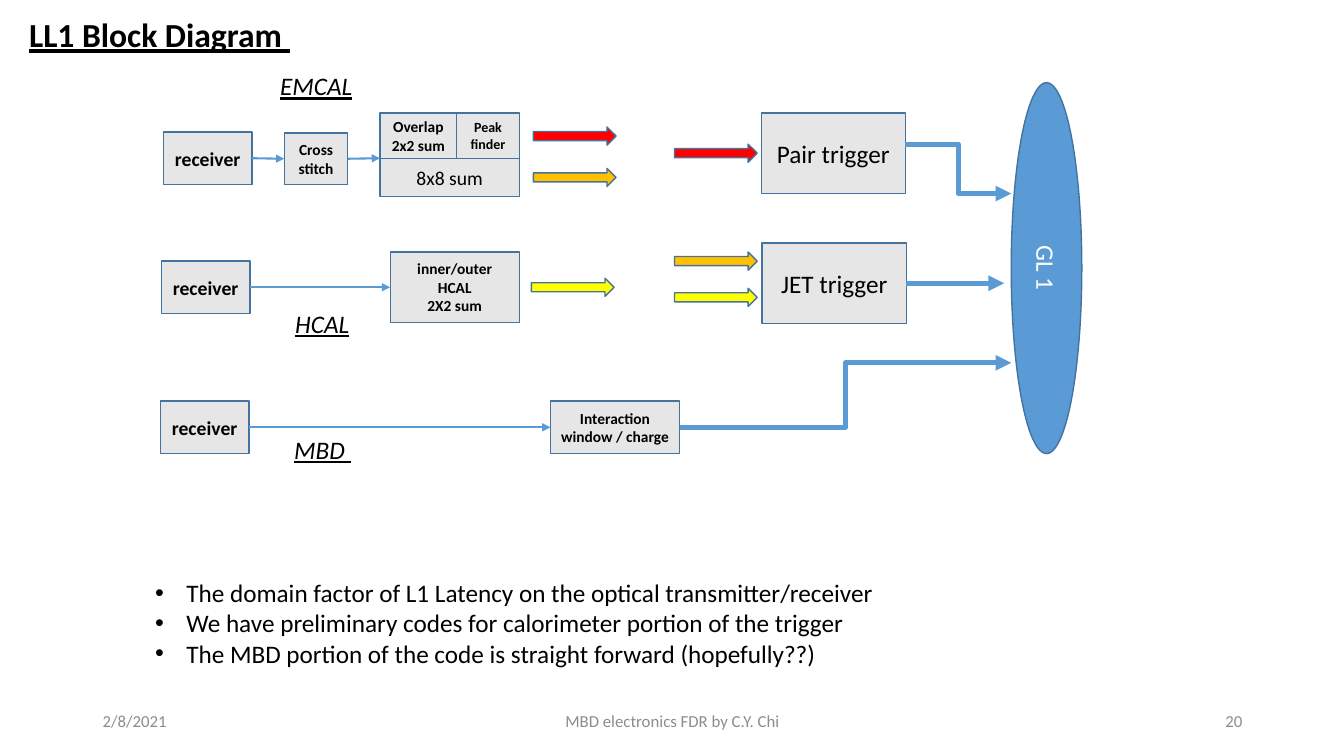
"""Build the LL1 trigger block diagram slide."""
from lxml import etree
from pptx import Presentation
from pptx import util as u
from pptx.dml import color
from pptx.enum import shapes, text
from pptx.oxml import ns

SCALE = 9144
FONT = "Calibri"
BLACK, WHITE, GREY = "000000", "FFFFFF", "8C8C8C"
PANEL, OUTLINE, BLUE = "E7E6E6", "43739E", "5B9BD5"
RED, ORANGE, YELLOW = "FF0000", "FFC000", "FFFF00"
LEFT, CENTER, RIGHT = text.PP_ALIGN.LEFT, text.PP_ALIGN.CENTER, text.PP_ALIGN.RIGHT
MIDDLE, TOP = text.MSO_ANCHOR.MIDDLE, text.MSO_ANCHOR.TOP
LEFT_SIDE, RIGHT_SIDE = 1, 3


def px(*lengths):
    """Turn pixel lengths into EMU."""
    return [u.Emu(length * SCALE) for length in lengths]


def rgb(hex_code):
    """Turn a hex string into a colour."""
    return color.RGBColor.from_string(hex_code)


def write(frame, lines, size, ink=BLACK, align=LEFT, anchor=TOP, **styles):
    """Fill a text frame with one run per paragraph."""
    frame.vertical_anchor = anchor
    for index, line in enumerate(lines):
        paragraph = frame.add_paragraph() if index else frame.paragraphs[0]
        paragraph.alignment = align
        run = paragraph.add_run()
        run.text = line
        run.font.name, run.font.size = FONT, u.Pt(size)
        run.font.color.rgb = rgb(ink)
        for style, value in styles.items():
            setattr(run.font, style, value)


def add_solid(slide, kind, place, fill):
    """Add an outlined preset shape with a flat fill."""
    solid = slide.shapes.add_shape(kind, *px(*place))
    solid.shadow.inherit = False
    solid.fill.solid()
    solid.fill.fore_color.rgb = rgb(fill)
    solid.line.color.rgb = rgb(OUTLINE)
    solid.line.width = u.Pt(1)
    return solid


def add_block(slide, place, lines, size, bold=False):
    """Add a labelled processing block."""
    block = add_solid(slide, shapes.MSO_SHAPE.RECTANGLE, place, PANEL)
    write(block.text_frame, lines, size, align=CENTER, anchor=MIDDLE, bold=bold)
    return block


def add_data_arrow(slide, left, top, fill):
    """Add a coloured arrow for one data stream."""
    add_solid(slide, shapes.MSO_SHAPE.RIGHT_ARROW, (left, top, 82, 18), fill)


def add_label(slide, place, lines, size, wrap=False, **styles):
    """Add a text box and return its frame."""
    frame = slide.shapes.add_textbox(*px(*place)).text_frame
    frame.word_wrap = wrap
    write(frame, lines, size, **styles)
    return frame


def add_link(slide, ends, width, source=None, target=None, elbow=False):
    """Add an arrow-headed connector, joined to the given blocks."""
    kind = shapes.MSO_CONNECTOR.ELBOW if elbow else shapes.MSO_CONNECTOR.STRAIGHT
    link = slide.shapes.add_connector(kind, *px(*ends))
    link.line.color.rgb = rgb(BLUE)
    link.line.width = u.Pt(width)
    properties = link.element.spPr
    head = etree.SubElement(properties.find(ns.qn("a:ln")), ns.qn("a:tailEnd"))
    head.set("type", "triangle")
    etree.SubElement(properties, ns.qn("a:effectLst"))
    if source is not None:
        link.begin_connect(source, RIGHT_SIDE)
    if target is not None:
        link.end_connect(target, LEFT_SIDE)


def add_bullets(slide, place, lines, size):
    """Add a bulleted list with a hanging indent."""
    indent = px(31)[0]
    for paragraph in add_label(slide, place, lines, size, wrap=True).paragraphs:
        properties = paragraph._p.get_or_add_pPr()
        properties.set("marL", str(indent))
        properties.set("indent", str(-indent))
        etree.SubElement(properties, ns.qn("a:buFont")).set("typeface", "Arial")
        etree.SubElement(properties, ns.qn("a:buChar")).set("char", "•")


def add_global_trigger(slide):
    """Add the tall ellipse that collects all triggers."""
    ellipse = add_solid(slide, shapes.MSO_SHAPE.OVAL, (1003, 82, 70, 368), BLUE)
    write(ellipse.text_frame, ["GL 1"], 18, WHITE, CENTER, MIDDLE)
    ellipse.text_frame._txBody.bodyPr.set("vert", "vert")


def add_diagram(slide):
    """Draw the three detector chains and their triggers."""
    emcal, hcal, mbd = [
        add_block(slide, (left, top, 88, 52), ["receiver"], 14, True)
        for left, top in ((162, 131), (160, 259), (159, 398))
    ]
    stitch = add_block(slide, (282, 132, 63, 51), ["Cross stitch"], 11, True)
    add_block(slide, (377, 112, 76, 45), ["Overlap 2x2 sum"], 11, True)
    add_block(slide, (453, 112, 62, 45), ["Peak", "finder"], 10, True)
    add_block(slide, (377, 157, 138, 38), ["8x8 sum"], 14)
    hcal_sum = add_block(slide, (387, 250, 128, 70), ["inner/outer HCAL", "2X2 sum"], 11, True)
    add_block(slide, (755, 112, 143, 80), ["Pair trigger"], 18)
    jet = add_block(slide, (756, 241, 143, 80), ["JET trigger"], 18)
    window = add_block(slide, (546, 398, 128, 52), ["Interaction window / charge"], 11, True)
    add_global_trigger(slide)

    for left, top, fill in (
        (529, 126, RED), (529, 167, ORANGE), (527, 276, YELLOW),
        (669, 143, RED), (669, 250, ORANGE), (669, 286, YELLOW),
    ):
        add_data_arrow(slide, left, top, fill)

    add_link(slide, (250, 157, 282, 157), 1.5, emcal, stitch)
    add_link(slide, (345, 157, 377, 157), 1.5, stitch)
    add_link(slide, (248, 285, 387, 285), 1.5, hcal, hcal_sum)
    add_link(slide, (247, 424, 546, 424), 1.5, mbd, window)
    add_link(slide, (899, 281, 996, 281), 3.75, jet)
    add_link(slide, (674, 424, 1003, 360), 3.75, elbow=True)
    add_link(slide, (898, 143, 1003, 192), 3.75, elbow=True)

    for place, detector in (
        ((268, 65, 93, 40), "EMCAL"),
        ((283, 301, 74, 40), "HCAL"),
        ((282, 426, 77, 40), "MBD "),
    ):
        add_label(slide, place, [detector], 18, italic=True, underline=True)


def main():
    """Build and save the slide."""
    deck = Presentation()
    deck.slide_width, deck.slide_height = px(1333, 750)
    slide = deck.slides.add_slide(deck.slide_layouts[6])
    add_label(slide, (19, 9, 281, 50), ["LL1 Block Diagram "], 24, bold=True, underline=True)
    add_diagram(slide)
    add_bullets(slide, (144, 568, 983, 101), [
        "The domain factor of L1 Latency on the optical transmitter/receiver",
        "We have preliminary codes for calorimeter portion of the trigger",
        "The MBD portion of the code is straight forward (hopefully??)",
    ], 18)
    for left, width, footer, align in (
        (92, 300, "2/8/2021", LEFT),
        (442, 450, "MBD electronics FDR by C.Y. Chi", CENTER),
        (942, 300, "20", RIGHT),
    ):
        add_label(slide, (left, 695, width, 40), [footer], 12, wrap=True,
                  ink=GREY, align=align, anchor=MIDDLE)
    deck.save("out.pptx")


if __name__ == "__main__":
    main()
